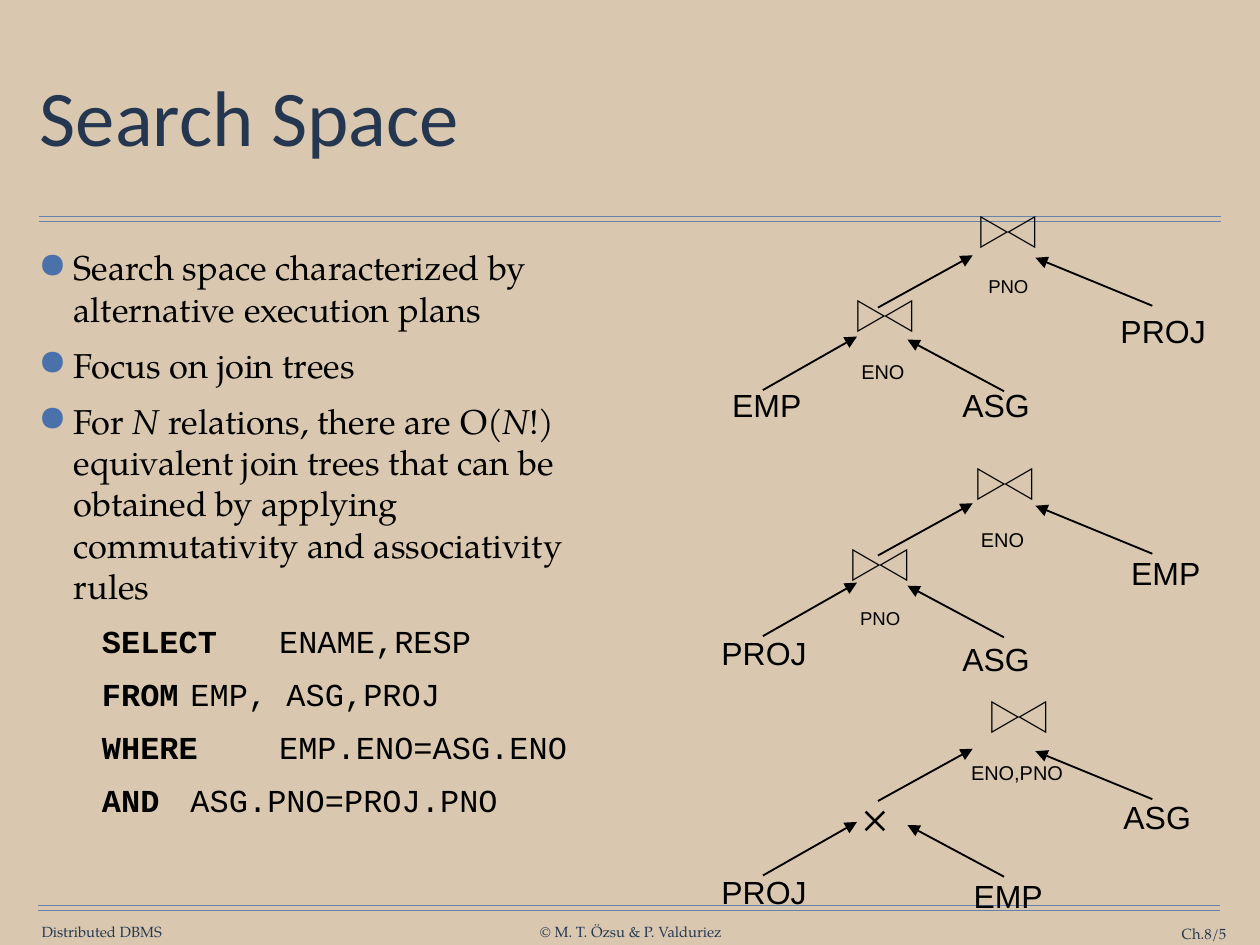
from dataclasses import dataclass

from lxml.etree import SubElement
from pptx import Presentation
from pptx.dml.color import RGBColor
from pptx.enum.shapes import MSO_CONNECTOR
from pptx.enum.text import MSO_ANCHOR, PP_ALIGN
from pptx.oxml.ns import qn
from pptx.util import Pt


@dataclass(frozen=True)
class Theme:
    background: str = "D9C8AF"
    title: str = "253750"
    footer: str = "263750"
    rule: str = "6682AA"
    bullet: str = "4A71A9"
    ink: str = "000000"
    serif: str = "TeX Gyre Pagella"
    sans: str = "Arial"
    heading: str = "Calibri"
    code: str = "Courier New"
    symbol: str = "Noto Sans CJK JP"
    title_size: int = 64
    body_size: int = 28
    code_size: int = 26
    leaf_size: int = 26
    product_size: int = 36
    footer_size: int = 12


THEME = Theme()

BULLETS = [
    [("Search space characterized by alternative execution plans", False)],
    [("Focus on join trees", False)],
    [("For ", False), ("N", True), (" relations, there are O(", False), ("N", True),
     ("!) equivalent join trees that can be obtained by applying "
      "commutativity and associativity rules", False)],
]
QUERY = [
    ("SELECT", "ENAME,RESP"),
    ("FROM", "EMP, ASG,PROJ"),
    ("WHERE", "EMP.ENO=ASG.ENO"),
    ("AND", "ASG.PNO=PROJ.PNO"),
]
UPPER_ARROWS = [(713.5, 250, 790.5, 207.5), (936.5, 248.5, 841.5, 209.5)]
LOWER_ARROWS = [(816, 318, 737.5, 276), (620, 317, 696.5, 273.5)]
TREE_SHIFTS = [(0, 0), (201.5, 200), (401, 394.5)]
LEAVES = [
    ("PROJ", 945.3, 249.8), ("ASG", 809.5, 309.6), ("EMP", 623.2, 309.6),
    ("PROJ", 621, 511.2), ("ASG", 809.5, 516.2), ("EMP", 947.5, 446.4),
    ("PROJ", 621, 705.6), ("ASG", 940.5, 644.4), ("EMP", 819.4, 708.5),
]
JOINS = [
    ("PNO", 819.4, 166.3, 82, 7.2, 26, 30),
    ("ENO", 717.5, 234.7, 88.6, 10.08, 28, 28),
    ("PNO", 715.3, 434.9, 103, 10.08, 26, 30),
    ("ENO", 814.7, 371.5, 88.6, 10.08, 28, 28),
    ("ENO,PNO", 826.5, 560.9, 145.4, 10.08, 28, 28),
]


def write(p, text, font=THEME.serif, size=THEME.body_size, color=THEME.ink,
          bold=False, italic=False, spacing=None, baseline=None):
    r = p.add_run()
    r.text = text
    r.font.name = font
    r.font.size = Pt(size)
    r.font.bold = bold
    r.font.italic = italic
    r.font.color.rgb = RGBColor.from_string(color)
    rpr = r.font._element
    if font == THEME.symbol:
        rpr.find(qn("a:latin")).addnext(rpr.makeelement(qn("a:ea"), {"typeface": font}))
    if spacing is not None:
        rpr.set("spc", str(spacing))
    if baseline is not None:
        rpr.set("baseline", str(baseline))


def add_box(s, x, y, w, h, inset=(0, 0), wrap=False,
            anchor=MSO_ANCHOR.TOP, align=PP_ALIGN.LEFT):
    tf = s.shapes.add_textbox(Pt(x), Pt(y), Pt(w), Pt(h)).text_frame
    tf.margin_left = tf.margin_right = Pt(inset[0])
    tf.margin_top = tf.margin_bottom = Pt(inset[1])
    tf.word_wrap = wrap
    tf.vertical_anchor = anchor
    tf.paragraphs[0].alignment = align
    return tf


def add_line(s, x1, y1, x2, y2, color=THEME.ink, width=1.5, arrow=True):
    c = s.shapes.add_connector(MSO_CONNECTOR.STRAIGHT, Pt(x1), Pt(y1), Pt(x2), Pt(y2))
    c.line.color.rgb = RGBColor.from_string(color)
    c.line.width = Pt(width)
    if arrow:
        SubElement(c.line._get_or_add_ln(), qn("a:tailEnd"),
                   type="triangle", w="lg", len="lg")
    SubElement(c._element.spPr, qn("a:effectLst"))


def add_double_rule(s, x, y):
    for top in (y, y + 4.3):
        add_line(s, x, top, x + 960.5, top, THEME.rule, 1, arrow=False)


def add_footer(s, text, x, w, y=750, align=PP_ALIGN.CENTER):
    tf = add_box(s, x, y, w, 14.4, anchor=MSO_ANCHOR.MIDDLE, align=align)
    write(tf.paragraphs[0], text, size=THEME.footer_size, color=THEME.footer)


def add_title(s, text):
    tf = add_box(s, 28, 35.3, 967.7, 126.7, (4.3, 4.3), True, MSO_ANCHOR.MIDDLE)
    tf.paragraphs[0].line_spacing = 0.9
    write(tf.paragraphs[0], text, font=THEME.heading, size=THEME.title_size,
          color=THEME.title)


def set_bullet(p):
    ppr = p._p.get_or_add_pPr()
    ppr.set("marL", str(Pt(28.8)))
    ppr.set("indent", str(-Pt(28.8)))
    SubElement(SubElement(ppr, qn("a:buClr")), qn("a:srgbClr"), val=THEME.bullet)
    SubElement(ppr, qn("a:buSzPct"), val="150000")
    SubElement(ppr, qn("a:buFont"), typeface=THEME.serif)
    SubElement(ppr, qn("a:buChar"), char="•")


def set_code_indent(p):
    p.level = 1
    ppr = p._p.get_or_add_pPr()
    ppr.set("marL", str(Pt(51.8)))
    ppr.set("indent", "0")
    ppr.set("defTabSz", str(Pt(72)))
    SubElement(ppr, qn("a:buNone"))


def add_body(s):
    tf = add_box(s, 26.7, 195.8, 462.2, 532.8, (4.3, 4.3), True)
    for i, parts in enumerate(BULLETS):
        p = tf.add_paragraph() if i else tf.paragraphs[0]
        set_bullet(p)
        p.space_before = Pt(12 if i else 0)
        for text, italic in parts:
            write(p, text, italic=italic)
    for keyword, clause in QUERY:
        p = tf.add_paragraph()
        set_code_indent(p)
        p.space_before = Pt(12)
        write(p, keyword + "\t", font=THEME.code, size=THEME.code_size, bold=True)
        write(p, clause, font=THEME.code, size=THEME.code_size)


def add_leaf(s, name, center, y):
    w = 90
    tf = add_box(s, center - w / 2, y, w, 39, (7.2, 3.6), align=PP_ALIGN.CENTER)
    write(tf.paragraphs[0], name, font=THEME.sans, size=THEME.leaf_size)


def add_join(s, label, center, y, w, inset, label_size, gap_size):
    tf = add_box(s, center - w / 2, y, w, 44.6, (inset, inset / 2), True,
                 align=PP_ALIGN.CENTER)
    p = tf.paragraphs[0]
    write(p, "▷◁", font=THEME.symbol, spacing=-430)
    write(p, " ", font=THEME.symbol, size=gap_size, spacing=-430)
    write(p, label, font=THEME.sans, size=label_size, baseline=-25000)


def add_product(s):
    tf = add_box(s, 687, 637.2, 48, 51, (7.2, 3.6), align=PP_ALIGN.CENTER)
    write(tf.paragraphs[0], "×", size=THEME.product_size)


def add_trees(s):
    for shifts in TREE_SHIFTS:
        for arrows, dy in zip((UPPER_ARROWS, LOWER_ARROWS), shifts):
            for x1, y1, x2, y2 in arrows:
                add_line(s, x1, y1 + dy, x2, y2 + dy)
    for leaf in LEAVES:
        add_leaf(s, *leaf)
    for join in JOINS:
        add_join(s, *join)
    add_product(s)


def main():
    prs = Presentation()
    prs.slide_width, prs.slide_height = Pt(1024), Pt(768)
    s = prs.slides.add_slide(prs.slide_layouts[6])
    s.background.fill.solid()
    s.background.fill.fore_color.rgb = RGBColor.from_string(THEME.background)
    add_double_rule(s, 31.5, 175.7)
    add_double_rule(s, 31, 735.8)
    add_footer(s, "Distributed DBMS", 33, 99.4)
    add_footer(s, "© M. T. Özsu & P. Valduriez", 437.8, 149.8)
    add_footer(s, "Ch.8/5", 885.8, 110.9, y=751.5, align=PP_ALIGN.RIGHT)
    add_title(s, "Search Space")
    add_body(s)
    add_trees(s)
    prs.save("out.pptx")


if __name__ == "__main__":
    main()
